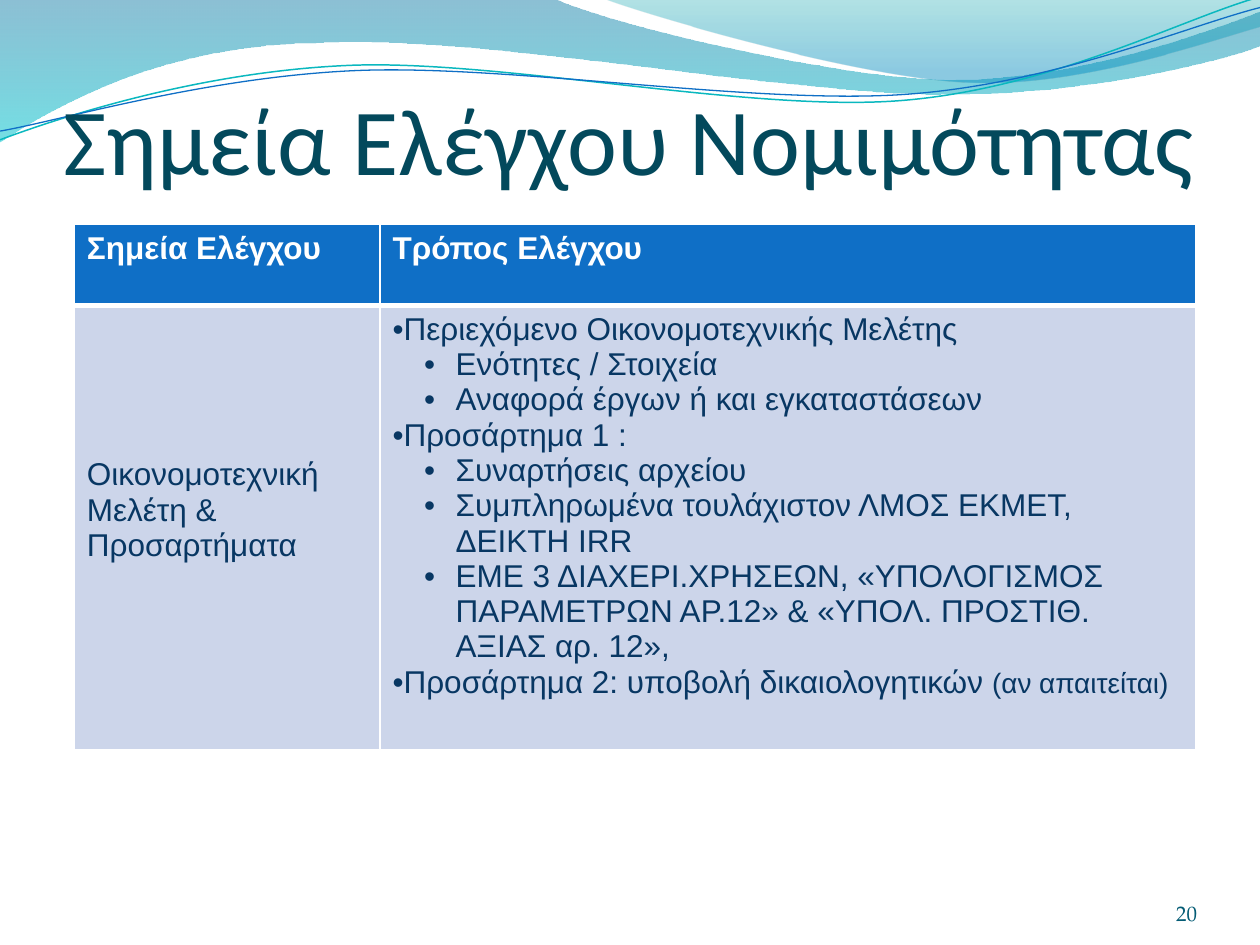
from lxml.etree import SubElement as Sub
from pptx import Presentation
from pptx.dml.color import RGBColor
from pptx.enum.text import MSO_ANCHOR as Anchor, MSO_AUTO_SIZE as Auto, PP_ALIGN as Align
from pptx.oxml import parse_xml
from pptx.oxml.ns import nsdecls, qn
from pptx.util import Pt

COLORS = {
    "title": "03495C", "head": "0F6FC6", "body": "CCD5EA", "ink": "083763",
    "white": "FFFFFF", "page": "045C75", "teal": "0AB8BF",
    "deep": "0074A1", "aqua": "00C6CF", "sea": "00A1A9", "sky": "008BBF",
}

# Each wave: start point, then segments of one point (line) or three (curve)
BAND = [(0, -0.7), [(316.8, -0.7)],
        [(342.7, 12.2), (478.1, 45.4), (545.8, 45.4)],
        [(614.2, 45.4), (689.8, 18.7), (720, 6.5)], [(720.7, 25.9)],
        [(707.8, 31.7), (626.4, 54.7), (537.1, 54)],
        [(447.8, 54), (275, 20.2), (185, 24.5)],
        [(92.9, 25.2), (33.1, 59.8), (-0.7, 81.4)]]
CREST = [(344.9, -0.7), [(366.5, 7.9), (491, 44.6), (553.7, 46.8)],
         [(616.3, 49.7), (691.9, 23), (720, 15.1)], [(720, 0)]]
UPPER = [(0, 79.9), [(34.6, 67), (113.8, 41), (199.4, 37.4)],
         [(284.4, 33.8), (427, 64.1), (513.4, 57.6)],
         [(599.8, 51.1), (675.4, 10.8), (718.6, -1.4)]]
LOWER = [(0, 74.9), [(33.8, 69.1), (118.1, 43.9), (203.8, 40.3)],
         [(290.2, 36.7), (429.8, 59.8), (516.2, 54)],
         [(601.9, 48.2), (677.5, 15.1), (720, 4.3)]]

HEADS = ["Σημεία Ελέγχου", "Τρόπος Ελέγχου"]
TOPIC = "Οικονομοτεχνική Μελέτη & Προσαρτήματα"
# Level and runs (text, size) of each check
CHECKS = [
    (0, [("Περιεχόμενο Οικονομοτεχνικής Μελέτης", 18)]),
    (1, [("Ενότητες / Στοιχεία", 18)]),
    (1, [("Αναφορά έργων ή και εγκαταστάσεων", 18)]),
    (0, [("Προσάρτημα 1 :", 18)]),
    (1, [("Συναρτήσεις αρχείου", 18)]),
    (1, [("Συμπληρωμένα τουλάχιστον ΛΜΟΣ ΕΚΜΕΤ, ΔΕΙΚΤΗ IRR", 18)]),
    (1, [("ΕΜΕ 3 ΔΙΑΧΕΡΙ.ΧΡΗΣΕΩΝ, «ΥΠΟΛΟΓΙΣΜΟΣ ΠΑΡΑΜΕΤΡΩΝ ΑΡ.12» "
          "& «ΥΠΟΛ. ΠΡΟΣΤΙΘ. ΑΞΙΑΣ αρ. 12»,", 18)]),
    (0, [("Προσάρτημα 2: υποβολή δικαιολογητικών ", 18), ("(αν απαιτείται)", 16)]),
]


def rgb(name):
    return RGBColor.from_string(COLORS[name])


def style(font, name, size, color, bold=False):
    font.name, font.size, font.bold = name, Pt(size), bold
    font.color.rgb = rgb(color)


def draw(slide, wave, left, top, close):
    start, *segs = wave
    pts = [(Pt(left + x), Pt(top + y)) for x, y in [start, *sum(segs, [])]]
    form = slide.shapes.build_freeform(*pts[0], scale=1.0)
    form.add_line_segments(pts[1:], close=close)
    shape = form.convert_to_shape()
    shape.shadow.inherit = False
    # Join each three points into one cubic curve
    lines = iter(list(shape.element.spPr.iter(qn("a:lnTo"))))
    for seg in segs:
        first, *rest = [next(lines) for _ in seg]
        if rest:
            first.addprevious(curve := parse_xml(f'<a:cubicBezTo {nsdecls("a")}/>'))
            for line in (first, *rest):
                curve.append(line[0])
                line.getparent().remove(line)
    return shape


def add_waves(slide, left, top):
    # Filled bands: colour, position and opacity of each stop
    for wave, stops in ((BAND, [("deep", 0, 45), ("aqua", 1, 55)]),
                        (CREST, [("sea", 0, 30), ("sky", 0.8, 45)])):
        shape = draw(slide, wave, left, top, True)
        shape.line.fill.background()
        shape.fill.gradient()
        shape.fill.gradient_angle = 270
        for stop, (color, pos, alpha) in zip(shape.fill.gradient_stops, stops):
            stop.color.rgb = rgb(color)
            stop.position = pos
        tags = shape.element.spPr.iter(qn("a:srgbClr"))
        for tag, (color, pos, alpha) in zip(tags, stops):
            Sub(tag, qn("a:alpha"), val=str(alpha * 1000))
    # Thin lines
    for wave, color, width in ((UPPER, "teal", 0.85), (LOWER, "head", 0.75)):
        shape = draw(slide, wave, left, top, False)
        shape.fill.background()
        shape.line.color.rgb = rgb(color)
        shape.line.width = Pt(width)


def add_title(slide, left, top, width, height):
    title = slide.shapes.title
    title.left, title.top, title.width, title.height = map(Pt, (left, top, width, height))
    frame = title.text_frame
    frame.text = "Σημεία Ελέγχου Νομιμότητας"
    frame.auto_size, frame.word_wrap = Auto.NONE, True
    frame.vertical_anchor = Anchor.BOTTOM
    frame.margin_left = frame.margin_right = frame.margin_bottom = 0
    par = frame.paragraphs[0]
    par.alignment = Align.LEFT
    style(par.font, "Calibri", 54, "title")
    # Bring the title in front of the waves
    title.element.getparent().append(title.element)


def fill_cell(cell, color, top, bottom):
    cell.fill.solid()
    cell.fill.fore_color.rgb = rgb(color)
    props = cell._tc.get_or_add_tcPr()
    for i, (side, width) in enumerate((("L", 1), ("R", 1), ("T", top), ("B", bottom))):
        props.insert(i, parse_xml(
            f'<a:ln{side} {nsdecls("a")} w="{Pt(width)}"><a:solidFill>'
            f'<a:srgbClr val="{COLORS["white"]}"/></a:solidFill></a:ln{side}>'))


def add_bullet(par, level):
    props = par._p.get_or_add_pPr()
    if level:
        par.level = level
    props.set("marL", str(Pt(36 * level)))
    props.set("indent", str(Pt(-18 * level)))
    Sub(props, qn("a:buFont"), typeface="Arial")
    Sub(props, qn("a:buChar"), char="•")


def add_checks(slide, left, top, width, height):
    table = slide.shapes.add_table(2, 2, *map(Pt, (left, top, width, height))).table
    first, head = 174.7, 46.4
    table.columns[0].width, table.columns[1].width = Pt(first), Pt(width - first)
    table.rows[0].height, table.rows[1].height = Pt(head), Pt(height - head)
    # Header row
    for col, text in enumerate(HEADS):
        cell = table.cell(0, col)
        cell.text = text
        style(cell.text_frame.paragraphs[0].font, "Arial", 18, "white", True)
        fill_cell(cell, "head", 1, 3)
        fill_cell(table.cell(1, col), "body", 3, 1)
    # Topic, raised a little above the middle
    cell = table.cell(1, 0)
    cell.text = TOPIC
    cell.vertical_anchor = Anchor.MIDDLE
    cell.margin_bottom = Pt(23.6)
    style(cell.text_frame.paragraphs[0].font, "Arial", 18, "ink")
    # Bulleted checks
    frame = table.cell(1, 1).text_frame
    for i, (level, runs) in enumerate(CHECKS):
        par = frame.add_paragraph() if i else frame.paragraphs[0]
        add_bullet(par, level)
        for text, size in runs:
            run = par.add_run()
            run.text = text
            style(run.font, "Arial", size, "ink")


def add_page(slide, left, top, width, height):
    frame = slide.shapes.add_textbox(*map(Pt, (left, top, width, height))).text_frame
    frame.word_wrap = True
    frame.vertical_anchor = Anchor.BOTTOM
    frame.margin_left = frame.margin_right = frame.margin_top = frame.margin_bottom = 0
    par = frame.paragraphs[0]
    par.text = "20"
    par.alignment = Align.RIGHT
    style(par.font, "TeX Gyre Pagella", 12, "page")


def main():
    deck = Presentation()
    deck.slide_width, deck.slide_height = Pt(720), Pt(540)
    slide = deck.slides.add_slide(deck.slide_layouts[5])
    add_waves(slide, 0, 0)
    add_title(slide, 36, 55.5, 648, 55.5)
    add_checks(slide, 42.5, 128.2, 641, 300.4)
    add_page(slide, 624, 500.2, 60, 28.8)
    deck.save("out.pptx")


if __name__ == "__main__":
    main()
